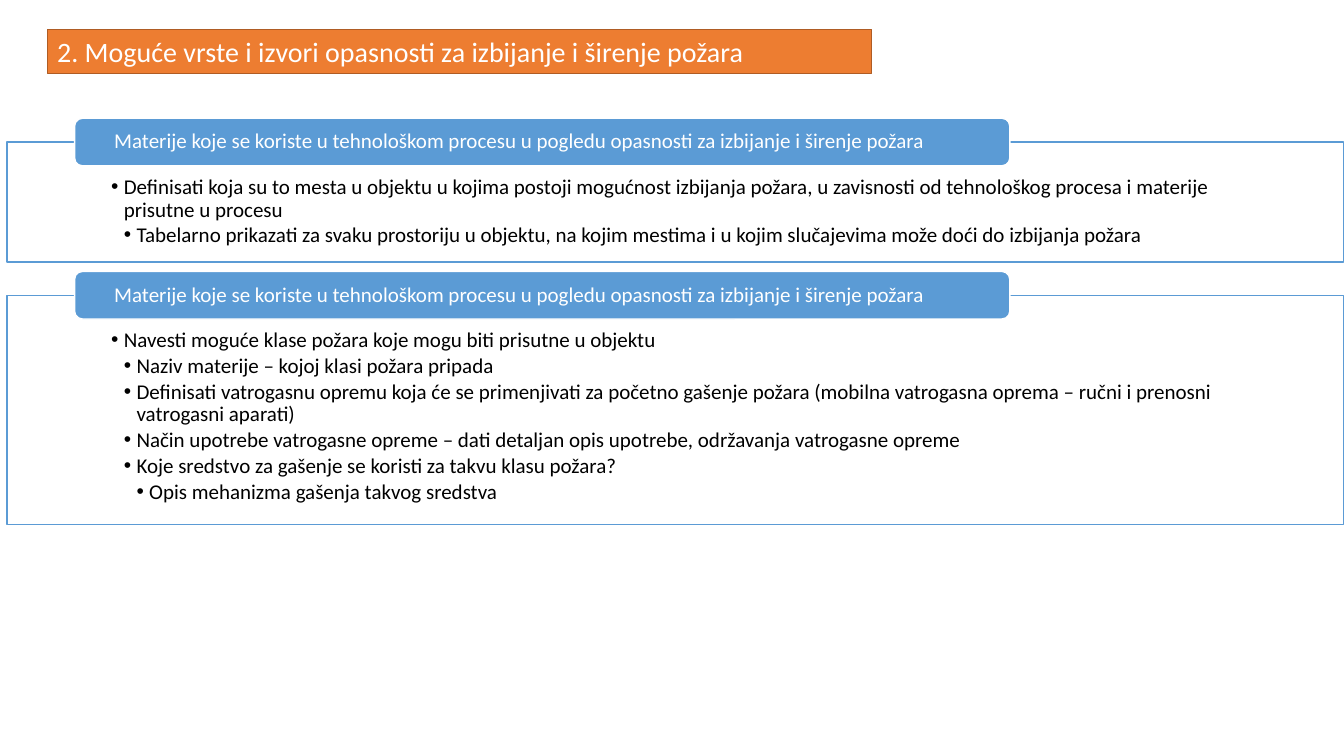
from lxml import etree
from pptx import Presentation
from pptx.dml.color import RGBColor
from pptx.enum.shapes import MSO_SHAPE
from pptx.enum.text import MSO_ANCHOR, MSO_AUTO_SIZE, PP_ALIGN
from pptx.oxml.ns import qn
from pptx.util import Cm, Pt

ROUNDED = MSO_SHAPE.ROUNDED_RECTANGLE
TOP, MIDDLE = MSO_ANCHOR.TOP, MSO_ANCHOR.MIDDLE
NO_AUTOFIT = MSO_AUTO_SIZE.NONE
LEFT = PP_ALIGN.LEFT

# Content
TITLE = "2. Moguće vrste i izvori opasnosti za izbijanje i širenje požara"
HEADING = ("Materije koje se koriste u tehnološkom procesu u pogledu opasnosti "
           "za izbijanje i širenje požara")
# Each section: heading, frame height in cm, list of (level, text)
SECTIONS = [
    (HEADING, 3.02, [
        (1, "Definisati koja su to mesta u objektu u kojima postoji mogućnost izbijanja "
            "požara, u zavisnosti od tehnološkog procesa i materije prisutne u procesu"),
        (2, "Tabelarno prikazati za svaku prostoriju u objektu, na kojim mestima i u kojim "
            "slučajevima može doći do izbijanja požara"),
    ]),
    (HEADING, 5.77, [
        (1, "Navesti moguće klase požara koje mogu biti prisutne u objektu"),
        (2, "Naziv materije – kojoj klasi požara pripada"),
        (2, "Definisati vatrogasnu opremu koja će se primenjivati za početno gašenje požara "
            "(mobilna vatrogasna oprema – ručni i prenosni vatrogasni aparati)"),
        (2, "Način upotrebe vatrogasne opreme – dati detaljan opis upotrebe, održavanja "
            "vatrogasne opreme"),
        (2, "Koje sredstvo za gašenje se koristi za takvu klasu požara?"),
        (3, "Opis mehanizma gašenja takvog sredstva"),
    ]),
]
COLORS = {"orange": "ED7D31", "brown": "AF5C24", "blue": "5B9BD5",
          "white": "FFFFFF", "black": "000000"}

# Layout in cm
FRAME_LEFT, FRAME_WIDTH, FIRST_TOP, FRAME_GAP = 0.18, 33.68, 3.58, 0.84
TAB_LEFT, TAB_WIDTH, TAB_HEIGHT, TAB_RISE = 1.88, 23.57, 1.2, 0.6
INDENT = 0.32
FRAME_INSETS = (2.62, 0.86, 2.62, 0.3)
TAB_INSETS = (0.94, 0, 0.94, 0)
TITLE_INSETS = (0.25, 0.13, 0.25, 0.13)


def color(name):
    return RGBColor.from_string(COLORS[name])


def set_values(target, values):
    for name, value in values.items():
        setattr(target, name, value)


def style_box(box, place, fill, line, insets, anchor):
    set_values(box, dict(zip(("left", "top", "width", "height"), map(Cm, place))))
    box.fill.solid()
    box.fill.fore_color.rgb = color(fill)
    box.line.color.rgb = color(line)
    box.line.width = Pt(1)
    sides = ("margin_left", "margin_top", "margin_right", "margin_bottom")
    set_values(box.text_frame, dict(zip(sides, map(Cm, insets))))
    set_values(box.text_frame, {"word_wrap": True, "auto_size": NO_AUTOFIT,
                                "vertical_anchor": anchor})


def write(para, text, size, ink, spacing=1.0, after=0):
    set_values(para, {"alignment": LEFT, "line_spacing": spacing,
                      "space_before": Pt(0), "space_after": Pt(after)})
    span = para.add_run()
    span.text = text
    set_values(span.font, {"name": "Calibri", "size": Pt(size), "bold": False})
    span.font.color.rgb = color(ink)


def add_bullet(para, level):
    para.level = level
    properties = para._p.get_or_add_pPr()
    properties.set("marL", str(Cm(INDENT * level)))
    properties.set("indent", str(-Cm(INDENT)))
    etree.SubElement(properties, qn("a:buChar")).set("char", "•")


deck = Presentation()
deck.slide_width, deck.slide_height = Cm(33.87), Cm(19.05)
page = deck.slides.add_slide(deck.slide_layouts.get_by_name("Two Content"))
title, *frames = list(page.placeholders)[:3]

# Title bar
style_box(title, (1.19, 0.74, 20.78, 1.11), "orange", "brown", TITLE_INSETS, TOP)
write(title.text_frame.paragraphs[0], TITLE, 20, "white")

# Framed lists, each with a heading tab over its top edge
top = FIRST_TOP
for frame, (heading, height, items) in zip(frames, SECTIONS):
    style_box(frame, (FRAME_LEFT, top, FRAME_WIDTH, height), "white", "blue",
              FRAME_INSETS, TOP)
    fill_color = frame.fill._xPr.find(qn("a:solidFill"))[0]
    etree.SubElement(fill_color, qn("a:alpha")).set("val", "90000")
    for number, (level, text) in enumerate(items):
        body = frame.text_frame
        para = body.add_paragraph() if number else body.paragraphs[0]
        add_bullet(para, level)
        write(para, text, 15, "black", 0.9, 2.25)

    place = (TAB_LEFT, top - TAB_RISE, TAB_WIDTH, TAB_HEIGHT)
    tab = page.shapes.add_shape(ROUNDED, *map(Cm, place))
    tab.shadow.inherit = False
    style_box(tab, place, "blue", "white", TAB_INSETS, MIDDLE)
    write(tab.text_frame.paragraphs[0], heading, 15, "white", 0.9)
    top += height + FRAME_GAP

deck.save("out.pptx")
